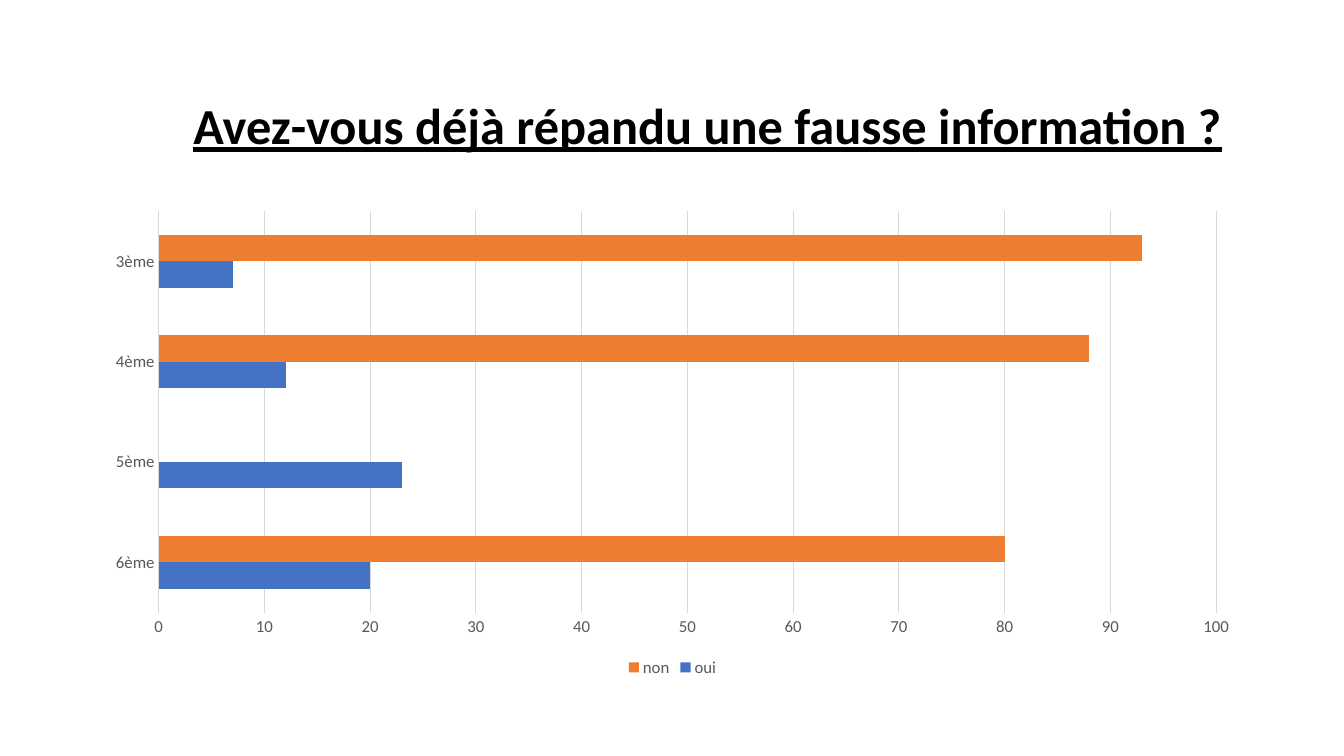
from dataclasses import dataclass
from typing import Any

from pptx import Presentation
from pptx.chart.data import CategoryChartData as ChartData
from pptx.dml.color import RGBColor as RGB
from pptx.enum.chart import XL_CHART_TYPE as Kind, XL_LEGEND_POSITION as Side
from pptx.enum.chart import XL_TICK_MARK as Tick
from pptx.enum.text import MSO_ANCHOR as Anchor, PP_ALIGN as Align
from pptx.util import Inches, Pt

COLORS = {
    "title": "000000",
    "label": "595959",
    "grid": "D9D9D9",
    "yes": "4472C4",
    "no": "ED7D31",
}


@dataclass(frozen=True)
class Answer:
    name: str
    color: str
    values: tuple[float | None, ...]


GRADES = ("6ème", "5ème", "4ème", "3ème")
ANSWERS = (
    Answer("oui", "yes", (20, 23, 12, 7)),
    Answer("non", "no", (80, None, 88, 93)),
)


def apply(target: Any, **values: Any) -> None:
    """Set each named value as an attribute of the target."""
    for key, value in values.items():
        setattr(target, key, value)


def color(name: str) -> RGB:
    return RGB.from_string(COLORS[name])


def set_font(font: Any, size: float, hue: str, **more: Any) -> None:
    apply(font, name="Calibri", size=Pt(size), **more)
    font.color.rgb = color(hue)


def set_line(line: Any) -> None:
    line.width = Pt(0.75)
    line.color.rgb = color("grid")


def add_title(slide: Any, text: str) -> None:
    box = slide.shapes.add_textbox(
        Inches(1.27), Inches(0.55), Inches(11.5), Inches(1.45)
    )
    frame = box.text_frame
    apply(frame, word_wrap=True, vertical_anchor=Anchor.MIDDLE)
    para = frame.paragraphs[0]
    apply(para, alignment=Align.CENTER, line_spacing=0.9)
    run = para.add_run()
    run.text = text
    set_font(run.font, 36, "title", bold=True, underline=True)


def add_bars(slide: Any) -> None:
    data = ChartData()
    data.categories = GRADES
    for answer in ANSWERS:
        data.add_series(answer.name, answer.values)
    chart = slide.shapes.add_chart(
        Kind.BAR_CLUSTERED,
        Inches(0.92), Inches(2), Inches(11.5), Inches(4.76), data,
    ).chart
    apply(chart, has_title=False, has_legend=True)
    set_font(chart.font, 10, "title")

    plot = chart.plots[0]
    apply(plot, gap_width=182, vary_by_categories=False)
    for series, answer in zip(plot.series, ANSWERS):
        series.format.fill.solid()
        series.format.fill.fore_color.rgb = color(answer.color)

    grades, scale = chart.category_axis, chart.value_axis
    for axis in (grades, scale):
        apply(axis, major_tick_mark=Tick.NONE, minor_tick_mark=Tick.NONE)
        set_font(axis.tick_labels.font, 12, "label")
    set_line(grades.format.line)
    apply(scale, minimum_scale=0, maximum_scale=100, major_unit=10)
    scale.format.line.fill.background()
    set_line(scale.major_gridlines.format.line)

    apply(chart.legend, position=Side.BOTTOM, include_in_layout=False)
    set_font(chart.legend.font, 12, "label")


def main() -> None:
    deck = Presentation()
    apply(deck, slide_width=Inches(13.33), slide_height=Inches(7.5))
    slide = deck.slides.add_slide(deck.slide_layouts[6])
    add_title(slide, "Avez-vous déjà répandu une fausse information ?")
    add_bars(slide)
    deck.save("out.pptx")


if __name__ == "__main__":
    main()
